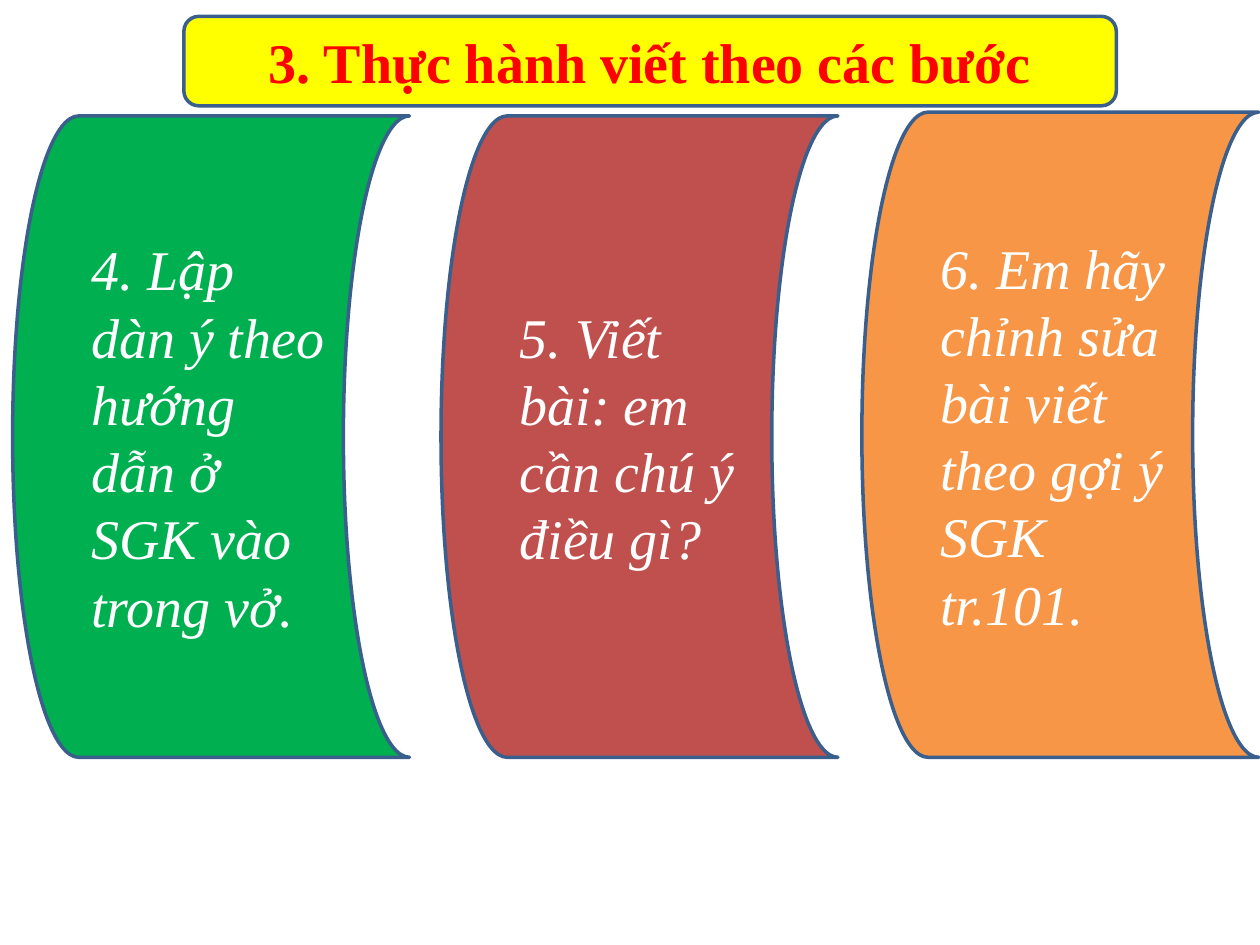
from pptx import Presentation
from pptx.dml.color import RGBColor
from pptx.enum.shapes import MSO_SHAPE
from pptx.enum.text import MSO_ANCHOR, PP_ALIGN
from pptx.util import Inches, Pt

GREEN = RGBColor(0x00, 0xB0, 0x50)
BRICK = RGBColor(0xC0, 0x50, 0x4D)
ORANGE = RGBColor(0xF7, 0x96, 0x46)
YELLOW = RGBColor(0xFF, 0xFF, 0x00)
RED = RGBColor(0xFF, 0x00, 0x00)
WHITE = RGBColor(0xFF, 0xFF, 0xFF)
OUTLINE = RGBColor(0x3A, 0x5F, 0x8C)

BASE_FONT = {"name": "Times New Roman", "size": Pt(32)}
HEADING_FONT = {**BASE_FONT, "bold": True}
STEP_FONT = {**BASE_FONT, "italic": True}

STEP_WIDTH = 3.15
STEPS_BOTTOM = 6.01
# Left edge, top edge, fill, wording
STEPS = [
    (0.1, 0.92, GREEN, "4. Lập dàn ý theo hướng dẫn ở SGK vào trong vở."),
    (3.5, 0.92, BRICK, "5. Viết bài: em cần chú ý điều gì?"),
    (6.84, 0.89, ORANGE, "6. Em hãy chỉnh sửa bài viết theo gợi ý SGK tr.101."),
]


def add_panel(slide, preset, box, fill, wording, font_format, ink, alignment):
    """Place an outlined panel with one centred-height paragraph in box (inches)."""
    panel = slide.shapes.add_shape(preset, *map(Inches, box))
    panel.shadow.inherit = False
    panel.fill.solid()
    panel.fill.fore_color.rgb = fill
    panel.line.color.rgb = OUTLINE
    panel.line.width = Pt(2)

    frame = panel.text_frame
    frame.word_wrap = True
    frame.vertical_anchor = MSO_ANCHOR.MIDDLE
    paragraph = frame.paragraphs[0]
    paragraph.alignment = alignment
    run = paragraph.add_run()
    run.text = wording
    for attribute, value in font_format.items():
        setattr(run.font, attribute, value)
    run.font.color.rgb = ink


def add_heading(slide, box):
    add_panel(slide, MSO_SHAPE.ROUNDED_RECTANGLE, box, YELLOW,
              "3. Thực hành viết theo các bước", HEADING_FONT, RED, PP_ALIGN.CENTER)


def add_steps(slide, width, bottom):
    for left, top, fill, wording in STEPS:
        add_panel(slide, MSO_SHAPE.FLOWCHART_STORED_DATA,
                  (left, top, width, bottom - top), fill, wording,
                  STEP_FONT, WHITE, PP_ALIGN.LEFT)


def main():
    presentation = Presentation()
    presentation.slide_width = Inches(10)
    presentation.slide_height = Inches(7.5)
    slide = presentation.slides.add_slide(presentation.slide_layouts[6])
    add_steps(slide, STEP_WIDTH, STEPS_BOTTOM)
    add_heading(slide, (1.46, 0.13, 7.4, 0.71))
    presentation.save("out.pptx")


if __name__ == "__main__":
    main()
